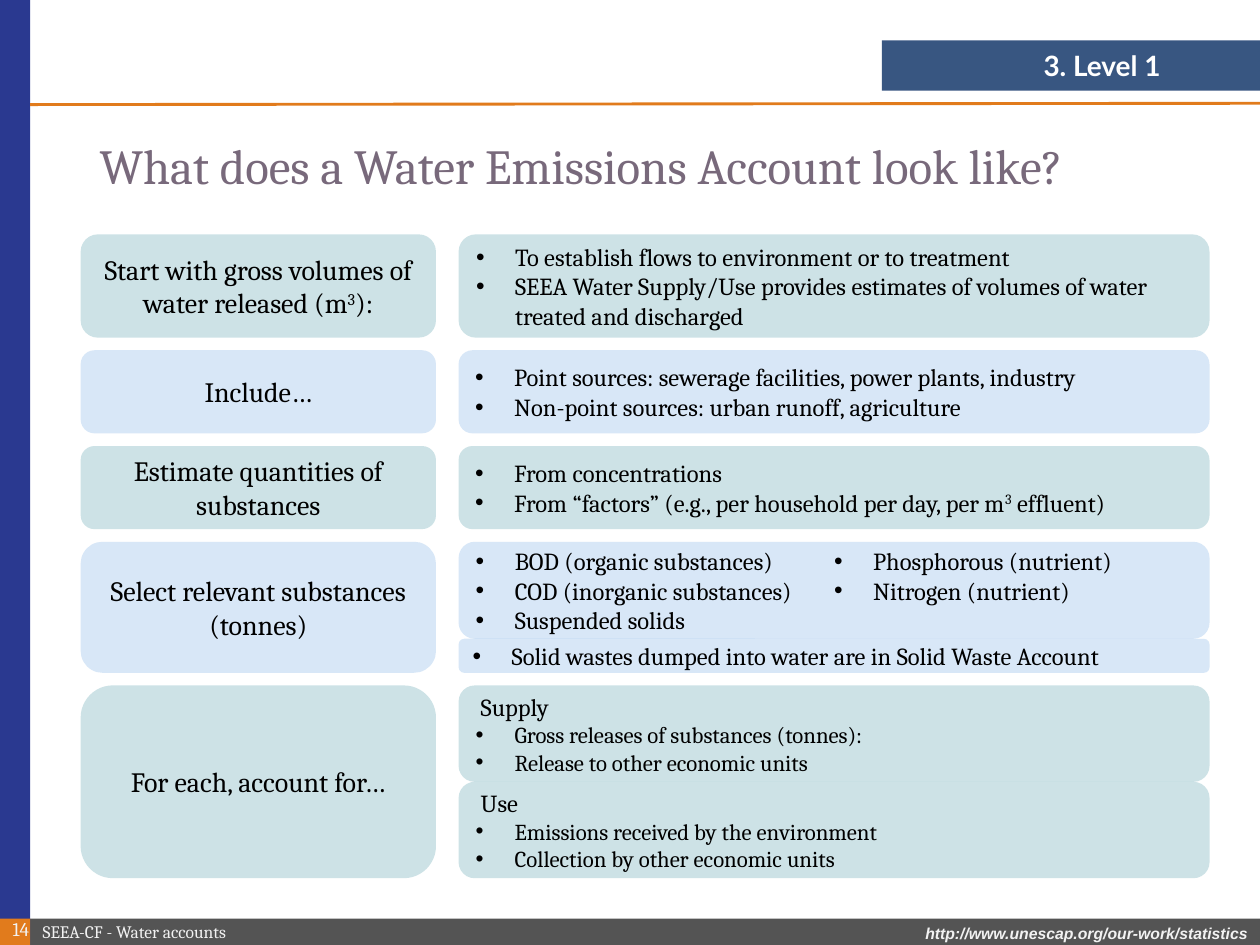
from pptx import Presentation
from pptx.dml.color import RGBColor
from pptx.enum.shapes import MSO_CONNECTOR, MSO_SHAPE
from pptx.enum.text import MSO_ANCHOR, PP_ALIGN
from pptx.oxml.ns import qn
from pptx.util import Emu, Inches, Pt
from lxml import etree

RECT, ROUNDED = MSO_SHAPE.RECTANGLE, MSO_SHAPE.ROUNDED_RECTANGLE
STRAIGHT = MSO_CONNECTOR.STRAIGHT
LEFT, CENTER, RIGHT = PP_ALIGN.LEFT, PP_ALIGN.CENTER, PP_ALIGN.RIGHT
TOP, MIDDLE = MSO_ANCHOR.TOP, MSO_ANCHOR.MIDDLE

WIDTH, HEIGHT = 10, 7.5
RAIL, FOOTER_TOP = 0.24, 7.29
LABEL_LEFT, LABEL_WIDTH = 0.64, 2.82
DETAIL_LEFT, DETAIL_WIDTH = 3.64, 5.96
FIRST_ROW, ROW_GAP = 1.86, 0.1
BULLET_INDENT, HEADING_INDENT = 0.31, 0.04
SERIF = "Cambria"
ORANGE, PALE = "E17B1C", "F2F2F2"
TEAL, BLUE = ("9CC7CE", 50), ("7EB2E6", 30)

ROWS = [
    (0.82, TEAL, "Start with gross volumes of water released (m^3^):", [
        (1, 1, None, ["To establish flows to environment or to treatment",
                      "SEEA Water Supply/Use provides estimates of volumes of water "
                      "treated and discharged"])]),
    (0.66, BLUE, "Include…", [
        (1, 1, None, ["Point sources: sewerage facilities, power plants, industry",
                      "Non-point sources: urban runoff, agriculture"])]),
    (0.66, TEAL, "Estimate quantities of substances", [
        (1, 1, None, ["From concentrations",
                      "From “factors” (e.g., per household per day, per m^3^ effluent)"])]),
    (1.04, BLUE, "Select relevant substances (tonnes)", [
        (0.74, 2, None, ["BOD (organic substances)", "COD (inorganic substances)",
                         "Suspended solids", "Phosphorous (nutrient)",
                         "Nitrogen (nutrient)"]),
        (0.26, 1, None, ["Solid wastes dumped into water are in Solid Waste Account"])]),
    (1.53, TEAL, "For each, account for…", [
        (0.5, 1, "Supply", ["Gross releases of substances (tonnes):",
                            "Release to other economic units"]),
        (0.5, 1, "Use", ["Emissions received by the environment",
                         "Collection by other economic units"])]),
]


def color(value):
    """Turn a hex string into a colour."""
    return RGBColor.from_string(value)


def add_block(slide, kind, box, fill, opacity=100):
    """Add a borderless filled shape with the given opacity in percent."""
    shape = slide.shapes.add_shape(kind, *map(Inches, box))
    shape.shadow.inherit = False
    shape.line.fill.background()
    shape.fill.solid()
    shape.fill.fore_color.rgb = color(fill)
    if opacity < 100:
        tone = shape.element.spPr.find(qn("a:solidFill")).find(qn("a:srgbClr"))
        etree.SubElement(tone, qn("a:alpha")).set("val", str(opacity * 1000))
    return shape


def write(paragraph, text, size, font=SERIF, fill="000000", align=LEFT,
          bold=False, italic=False):
    """Write text into a paragraph, raising the parts between carets."""
    paragraph.alignment = align
    for index, part in enumerate(text.split("^")):
        run = paragraph.add_run()
        run.text = part
        run.font.name, run.font.size = font, Pt(size)
        run.font.bold, run.font.italic = bold, italic
        run.font.color.rgb = color(fill)
        if index % 2:
            run.font._element.set("baseline", "30000")


def indent(paragraph, left, bullet=False):
    """Indent a paragraph, hanging it from a bullet if asked."""
    properties = paragraph._p.get_or_add_pPr()
    properties.set("marL", str(Inches(left)))
    if bullet:
        properties.set("indent", str(-Inches(left)))
        etree.SubElement(properties, qn("a:buFont")).set("typeface", "Arial")
        etree.SubElement(properties, qn("a:buChar")).set("char", "•")


def add_text(slide, box, text, size, anchor=MIDDLE, **style):
    """Add a text box holding one paragraph."""
    frame = slide.shapes.add_textbox(*map(Inches, box)).text_frame
    frame.word_wrap = True
    frame.vertical_anchor = anchor
    write(frame.paragraphs[0], text, size, **style)


def add_panel(slide, box, tint):
    """Add a rounded tinted panel and return its text frame."""
    frame = add_block(slide, ROUNDED, box, *tint).text_frame
    frame.word_wrap = True
    frame.vertical_anchor = MIDDLE
    frame.margin_top = frame.margin_bottom = Emu(0)
    return frame


def add_detail(slide, box, tint, columns, heading, items):
    """Add a panel with bullets under an optional heading."""
    frame = add_panel(slide, box, tint)
    if columns > 1:
        frame._txBody.bodyPr.set("numCol", str(columns))
    paragraph = frame.paragraphs[0]
    if heading:
        indent(paragraph, HEADING_INDENT)
        write(paragraph, heading, 14)
    for index, item in enumerate(items):
        if heading or index:
            paragraph = frame.add_paragraph()
        indent(paragraph, BULLET_INDENT, bullet=True)
        write(paragraph, item, 13 if heading else 14)


def add_rows(slide):
    """Stack the rows, each a label beside its detail panels."""
    top = FIRST_ROW
    for height, tint, label, details in ROWS:
        frame = add_panel(slide, (LABEL_LEFT, top, LABEL_WIDTH, height), tint)
        write(frame.paragraphs[0], label, 16, align=CENTER)
        detail_top = top
        for share, columns, heading, items in details:
            box = (DETAIL_LEFT, detail_top, DETAIL_WIDTH, share * height)
            add_detail(slide, box, tint, columns, heading, items)
            detail_top += share * height
        top += height + ROW_GAP


def add_frame(slide):
    """Add the side rail, header tag, rule and footer."""
    footer_height = HEIGHT - FOOTER_TOP
    add_block(slide, RECT, (7, 0.32, 3, 0.4), "072C62", 80)
    add_block(slide, RECT, (RAIL, FOOTER_TOP, WIDTH - RAIL, footer_height), "545454")
    add_block(slide, RECT, (0, 0, RAIL, HEIGHT), "2A3990")
    add_block(slide, RECT, (0, FOOTER_TOP, RAIL, footer_height), ORANGE)
    rule = slide.shapes.add_connector(
        STRAIGHT, Inches(RAIL), Inches(0.83), Inches(WIDTH), Inches(0.82))
    rule.line.color.rgb = color(ORANGE)
    rule.line.width = Pt(1.65)
    etree.SubElement(rule._element.spPr, qn("a:effectLst"))
    add_text(slide, (6.26, 7.28, 3.74, 0.25), "http://www.unescap.org/our-work/statistics",
             9, anchor=TOP, font="Arial", fill=PALE, align=RIGHT, bold=True, italic=True)
    add_text(slide, (RAIL, FOOTER_TOP, 2.99, 0.2), "SEEA-CF - Water accounts", 10, fill=PALE)
    add_text(slide, (-0.07, 7.22, 0.4, 0.31), "14", 11, fill=PALE, align=RIGHT)
    add_text(slide, (7, 0.33, 2.31, 0.37), "3. Level 1", 16, font="Lato",
             fill="FFFFFF", align=RIGHT, bold=True)


def add_title(slide, text):
    """Place and fill the title."""
    title = slide.shapes.title
    title.left, title.top, title.width, title.height = map(Inches, (0.69, 0.89, 8.62, 0.89))
    title.text_frame.vertical_anchor = MIDDLE
    paragraph = title.text_frame.paragraphs[0]
    paragraph.line_spacing = 0.9
    write(paragraph, text, 28, fill="78697B")


def main():
    """Build and save the slide."""
    presentation = Presentation()
    presentation.slide_width, presentation.slide_height = Inches(WIDTH), Inches(HEIGHT)
    slide = presentation.slides.add_slide(presentation.slide_layouts[5])
    add_frame(slide)
    add_title(slide, "What does a Water Emissions Account look like?")
    add_rows(slide)
    presentation.save("out.pptx")


if __name__ == "__main__":
    main()
